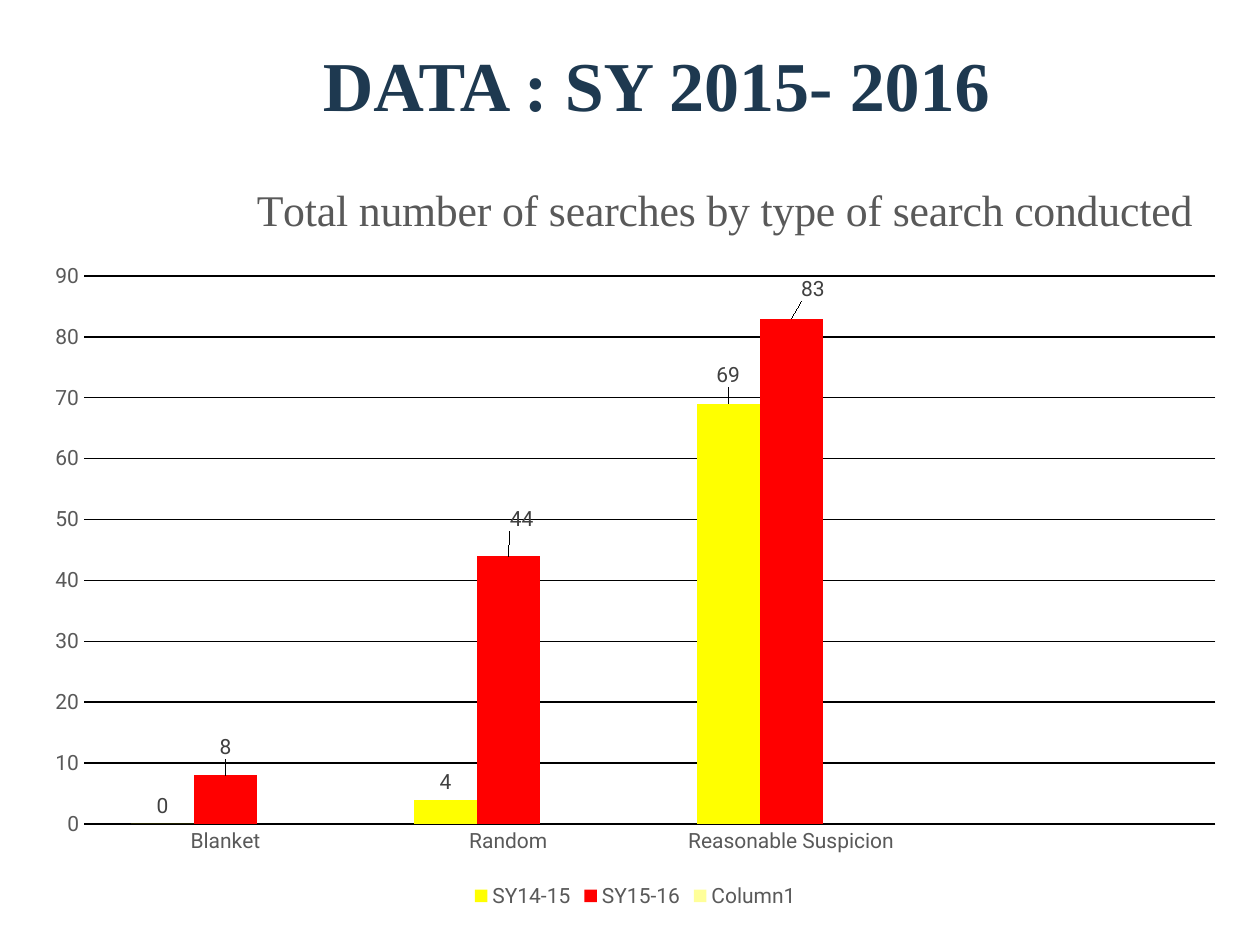
from pptx import Presentation
from pptx.chart.data import CategoryChartData
from pptx.dml.color import RGBColor
from pptx.enum.chart import (XL_CHART_TYPE, XL_LABEL_POSITION,
                             XL_LEGEND_POSITION, XL_TICK_MARK)
from pptx.enum.text import MSO_ANCHOR, PP_ALIGN
from pptx.oxml import parse_xml
from pptx.oxml.ns import nsdecls, qn
from pptx.util import Pt

COLUMNS = XL_CHART_TYPE.COLUMN_CLUSTERED
OUTSIDE = XL_LABEL_POSITION.OUTSIDE_END
BOTTOM = XL_LEGEND_POSITION.BOTTOM
NO_TICK = XL_TICK_MARK.NONE
MIDDLE = MSO_ANCHOR.MIDDLE
CENTER = PP_ALIGN.CENTER

TITLE = "DATA : SY 2015- 2016"
HEADING = "Total number of searches by type of search conducted"
TYPES = ["Blanket", "Random", "Reasonable Suspicion", ""]
SERIES = [
    ("SY14-15", [0, 4, 69, None], "FFFF00"),
    ("SY15-16", [8, 44, 83, None], "FF0000"),
    ("Column1", [None] * 4, "FFFF99"),
]
# (series, point): shift of the label as a share of the chart
SHIFTS = {
    (0, 2): (0, -0.015),
    (1, 0): (0, -0.014),
    (1, 1): (0.011, -0.026),
    (1, 2): (0.018, -0.016),
}

THEME = {
    "serif": "Times New Roman", "sans": "Roboto",
    "navy": "1E3950", "gray": "595959", "dark": "404040", "black": "000000",
    "title": 40, "heading": 25, "label": 12, "base": 10,
}
TITLE_BOX = (84, 12, 582, 72)
CHART_BOX = (18, 96, 690, 426)


def style(font, size="label", color="gray", face="sans", bold=False):
    font.name = THEME[face]
    font.size = Pt(THEME[size])
    font.bold = bold
    font.color.rgb = RGBColor.from_string(THEME[color])


def write(frame, text, align=CENTER, **look):
    frame.text = text
    para = frame.paragraphs[0]
    para.alignment = align
    style(para.runs[0].font, **look)


def place(parent, index, x, y, w=None, h=None):
    """Give a chart part a manual layout, in shares of the chart."""
    for old in parent.findall(qn("c:layout")):
        parent.remove(old)
    if w is None:
        tags = [("x", x), ("y", y)]
    else:
        tags = [("layoutTarget", "inner"), ("xMode", "edge"),
                ("yMode", "edge"), ("x", x), ("y", y), ("w", w), ("h", h)]
    body = "".join(f'<c:{tag} val="{val}"/>' for tag, val in tags)
    parent.insert(index, parse_xml(
        f'<c:layout {nsdecls("c")}><c:manualLayout>{body}'
        '</c:manualLayout></c:layout>'))


def add_chart(slide):
    data = CategoryChartData()
    data.categories = TYPES
    for name, vals, _ in SERIES:
        data.add_series(name, vals)
    box = [Pt(n) for n in CHART_BOX]
    chart = slide.shapes.add_chart(COLUMNS, *box, data).chart
    style(chart.font, size="base", color="black")

    chart.has_title = True
    head = chart.chart_title
    write(head.text_frame, HEADING, size="heading", face="serif")
    head.include_in_layout = False
    place(head._element, 1, 0.18, 0.01)
    # A title is placed from the chart's edge, unlike a data label
    spot = head._element.find(qn("c:layout"))[0]
    for tag in ("yMode", "xMode"):
        spot.insert(0, parse_xml(f'<c:{tag} {nsdecls("c")} val="edge"/>'))

    chart.has_legend = True
    chart.legend.position = BOTTOM
    chart.legend.include_in_layout = False
    style(chart.legend.font)

    for axis in (chart.category_axis, chart.value_axis):
        axis.major_tick_mark = axis.minor_tick_mark = NO_TICK
        axis.format.line.fill.background()
        style(axis.tick_labels.font)
    scale = chart.value_axis
    scale.minimum_scale, scale.maximum_scale, scale.major_unit = 0, 90, 10
    grid = scale.major_gridlines.format.line
    grid.width = Pt(0.75)
    grid.color.rgb = RGBColor.from_string(THEME["black"])

    plot = chart.plots[0]
    plot.gap_width, plot.overlap = 150, 0
    plot.vary_by_categories = False
    for series, (_, _, color) in zip(plot.series, SERIES):
        series.format.fill.solid()
        series.format.fill.fore_color.rgb = RGBColor.from_string(color)
        labels = series.data_labels
        labels.show_value = True
        labels.position = OUTSIDE
        style(labels.font, color="dark")
    for (row, col), shift in SHIFTS.items():
        series = plot.series[row]
        label = series.points[col].data_label
        style(label.font, color="dark")
        label.position = OUTSIDE
        node = series._element.xpath(f'.//c:dLbl[c:idx/@val="{col}"]')[0]
        place(node, 1, *shift)
    area = chart._chartSpace.chart.plotArea
    place(area, 0, 0.0435, 0.145, 0.937, 0.735)


def main():
    deck = Presentation()
    deck.slide_width, deck.slide_height = Pt(720), Pt(540)
    slide = deck.slides.add_slide(deck.slide_layouts[5])
    title = slide.shapes.title
    title.left, title.top, title.width, title.height = map(Pt, TITLE_BOX)
    title.text_frame.vertical_anchor = MIDDLE
    write(title.text_frame, TITLE, size="title", color="navy",
          face="serif", bold=True)
    add_chart(slide)
    deck.save("out.pptx")


if __name__ == "__main__":
    main()
